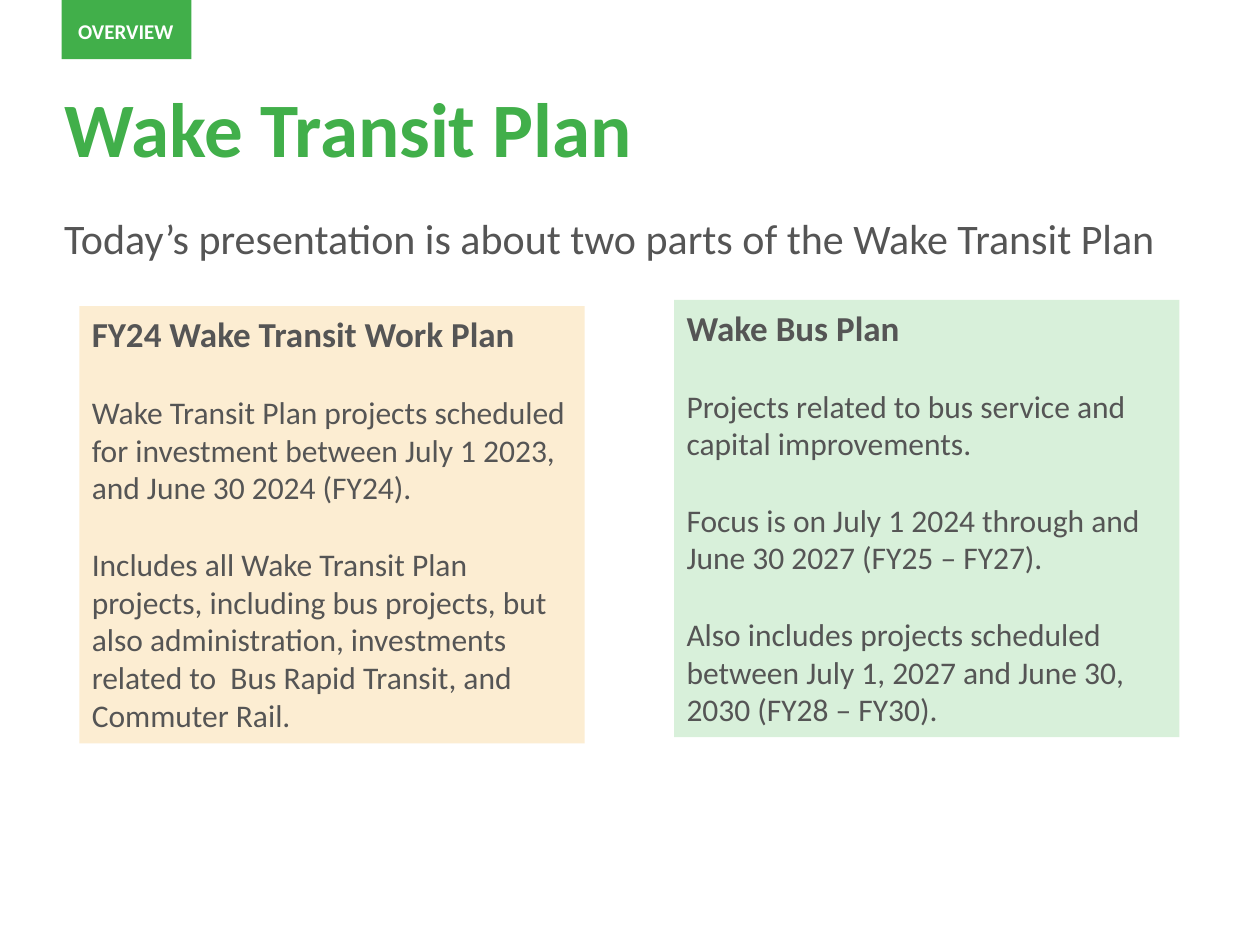
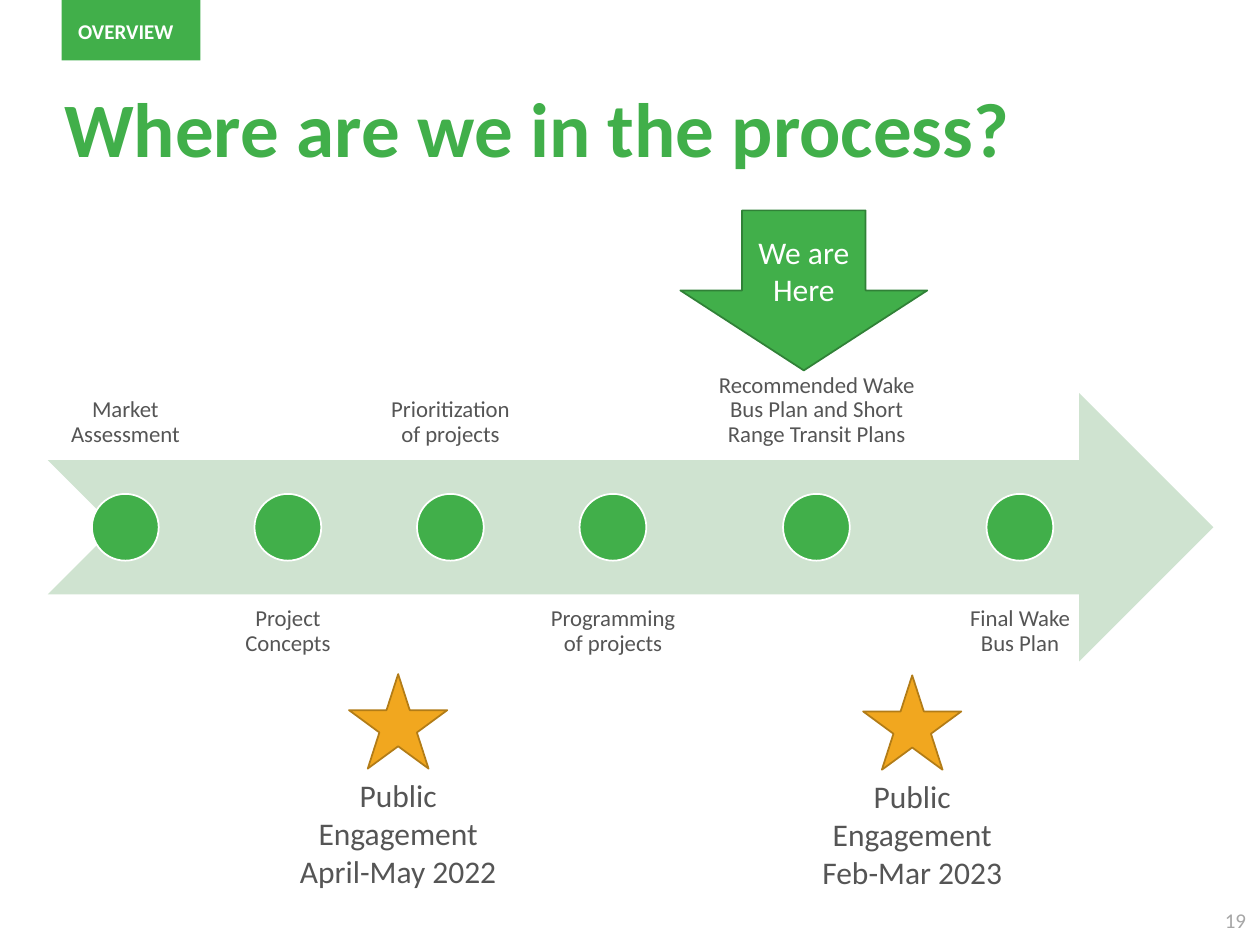
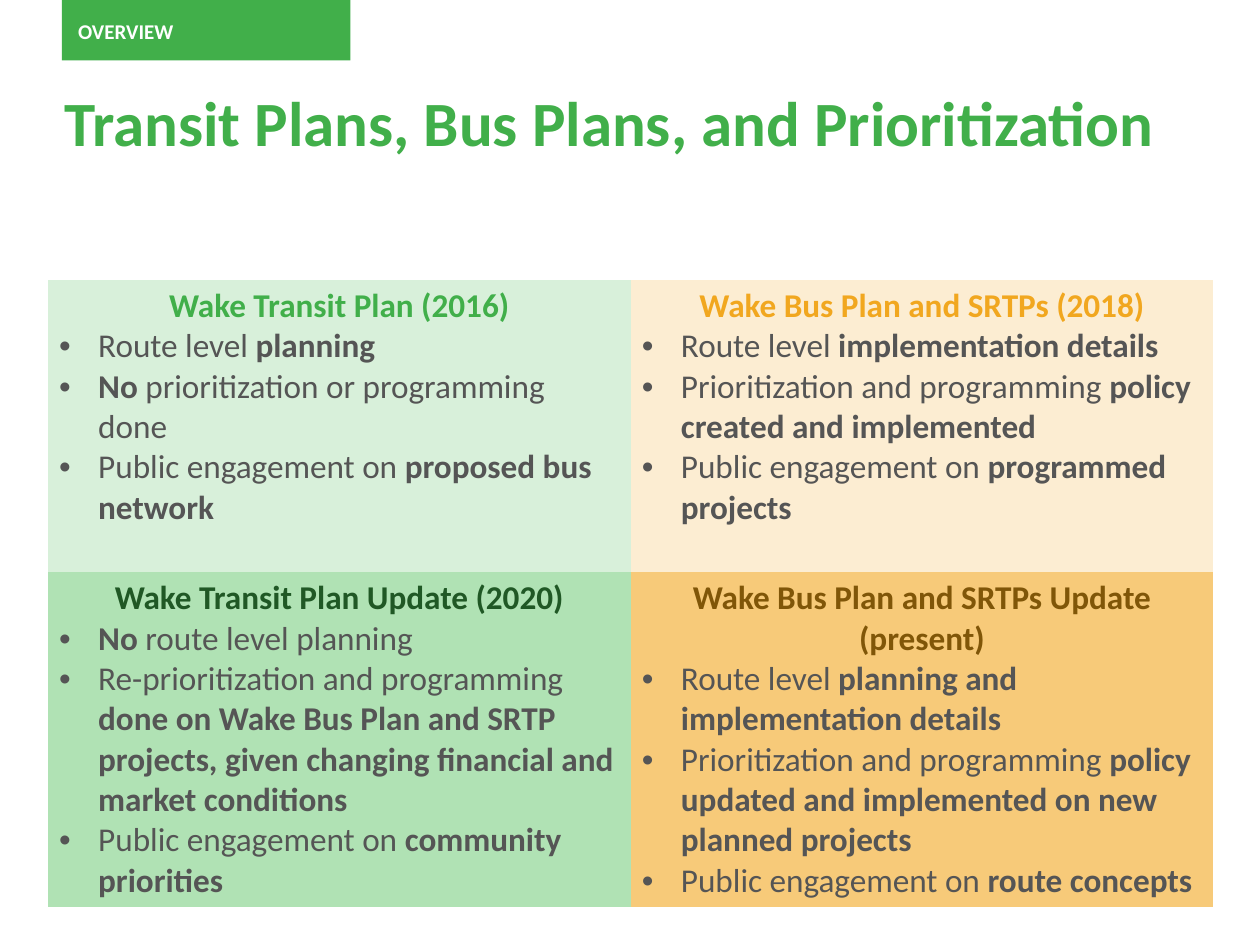
from lxml import etree
from pptx import Presentation
from pptx.dml.color import RGBColor
from pptx.enum.shapes import MSO_SHAPE
from pptx.enum.text import MSO_ANCHOR, MSO_AUTO_SIZE, PP_ALIGN
from pptx.oxml.ns import qn
from pptx.util import Inches, Pt

RECT, OVAL, STAR = MSO_SHAPE.RECTANGLE, MSO_SHAPE.OVAL, MSO_SHAPE.STAR_5_POINT
DOWN_ARROW, TIME_ARROW = MSO_SHAPE.DOWN_ARROW, MSO_SHAPE.NOTCHED_RIGHT_ARROW
TOP, MIDDLE, BOTTOM = MSO_ANCHOR.TOP, MSO_ANCHOR.MIDDLE, MSO_ANCHOR.BOTTOM
LEFT, CENTER = PP_ALIGN.LEFT, PP_ALIGN.CENTER

FONT = "Calibri"
NO_GRID_STYLE = "{2D5ABB26-0587-4C30-8999-92F81FD0307C}"
COLORS = {
    "green": "41AF4A", "green_line": "308137", "green_dark": "205825",
    "green_mid": "B0E2B4", "green_pale": "D8F0DA", "arrow": "CFE3D0",
    "orange": "F1A71F", "orange_line": "B27C17", "orange_dark": "805608",
    "orange_mid": "F7CA79", "orange_pale": "FCEDD2",
    "text": "555555", "number": "A6A6A6", "white": "FFFFFF",
}
C = {name: RGBColor.from_string(value) for name, value in COLORS.items()}


def add_text(tf, text, size, color="text", align=LEFT, spacing=1.0):
    """Fill the empty first paragraph or add one; *stars* mark bold."""
    p = tf.paragraphs[0]
    if p.runs:
        p = tf.add_paragraph()
    p.alignment, p.line_spacing, p.space_before = align, spacing, Pt(0)
    for i, part in enumerate(text.split("*")):
        if part:
            r = p.add_run()
            r.text = part
            r.font.name, r.font.size, r.font.bold = FONT, Pt(size), i % 2 == 1
            r.font.color.rgb = C[color]
    return p


def add_box(s, kind, at, fill=None, line=None, anchor=TOP, margin=None):
    """Add a preset shape, or a text box when kind is None."""
    at = [Inches(v) for v in at]
    if kind is None:
        sp = s.shapes.add_textbox(*at)
    else:
        sp = s.shapes.add_shape(kind, *at)
        sp.shadow.inherit = False
        sp.fill.solid()
        sp.fill.fore_color.rgb = C[fill]
        if line:
            sp.line.color.rgb = C[line]
            sp.line.width = Pt(1)
        else:
            sp.line.fill.background()
    tf = sp.text_frame
    tf.word_wrap, tf.vertical_anchor = True, anchor
    if margin is not None:
        tf.margin_left = tf.margin_right = Inches(margin)
        tf.margin_top = tf.margin_bottom = Inches(margin)
    return tf


prs = Presentation()
prs.slide_width, prs.slide_height = Inches(10), Inches(7.5)

# Shared title and section tab: layout, title, title size, tab size
slides = []
for layout, title, size, tab_w, tab_h in [
    (1, "Wake Transit Plan", 44, 1.03, 0.47),
    (5, "Where are we in the process?", 44, 1.1, 0.48),
    (5, "Transit Plans, Bus Plans, and Prioritization", 36, 2.29, 0.48),
]:
    s = prs.slides.add_slide(prs.slide_layouts[layout])
    slides.append(s)
    placeholders = [(s.shapes.title, 0.65, 0.87)]
    if layout == 1:
        placeholders.append((s.placeholders[1], 1.52, 5.33))
    for sp, top, height in placeholders:
        sp.left, sp.top = Inches(0.38), Inches(top)
        sp.width, sp.height = Inches(9.25), Inches(height)
        tf = sp.text_frame
        tf.auto_size, tf.vertical_anchor = MSO_AUTO_SIZE.NONE, TOP
        tf.margin_left = tf.margin_right = Inches(0.13)
        tf.margin_top = tf.margin_bottom = Inches(0.13)
    add_text(s.shapes.title.text_frame, f"*{title}*", size, "green", spacing=0.8)
    tf = add_box(s, RECT, (0.49, 0, tab_w, tab_h), "green", margin=0.13)
    tf.margin_right = 0
    add_text(tf, "*OVERVIEW*", 12, "white", spacing=1.1)

overview, process, comparison = slides

# Slide 1: two plan cards
p = add_text(overview.placeholders[1].text_frame,
             "Today’s presentation is about two parts of the Wake Transit Plan",
             24, spacing=1.1)
pPr = p._p.get_or_add_pPr()
pPr.set("marL", "0")
pPr.set("indent", "0")
etree.SubElement(pPr, qn("a:buNone"))

cards = [
    (0.63, 2.43, "orange_pale", "FY24 Wake Transit Work Plan", [
        "Wake Transit Plan projects scheduled for investment between "
        "July 1 2023, and June 30 2024 (FY24).",
        "Includes all Wake Transit Plan projects, including bus projects, but also "
        "administration, investments related to  Bus Rapid Transit, and Commuter Rail."]),
    (5.35, 2.38, "green_pale", "Wake Bus Plan", [
        "Projects related to bus service and capital improvements.",
        "Focus is on July 1 2024 through and June 30 2027 (FY25 – FY27).",
        "Also includes projects scheduled between July 1, 2027 and "
        "June 30, 2030 (FY28 – FY30)."]),
]
for left, top, fill, heading, paragraphs in cards:
    tf = add_box(overview, RECT, (left, top, 4.01, 3.47), fill)
    add_text(tf, f"*{heading}*", 20)
    for text in paragraphs:
        add_text(tf, text, 18).space_before = Pt(22)

# Slide 2: timeline with labels alternating above and below the arrow
add_box(process, TIME_ARROW, (0.38, 3.12, 9.25, 2.13), "arrow")
milestones = [
    ("Market Assessment", 1.23), ("Project Concepts", 1.23),
    ("Prioritization of projects", 1.23), ("Programming of projects", 1.23),
    ("Recommended Wake Bus Plan and Short Range Transit Plans", 1.88),
    ("Final Wake Bus Plan", 1.23),
]
GAP, DOT = 0.06, 0.53
left = 0.38
for i, (label, width) in enumerate(milestones):
    top, anchor = (4.72, TOP) if i % 2 else (1.52, BOTTOM)
    tf = add_box(process, None, (left, top, width, 2.13), anchor=anchor, margin=0.1)
    add_text(tf, label, 13, align=CENTER, spacing=0.9)
    add_box(process, OVAL, (left + (width - DOT) / 2, 3.92, DOT, DOT), "green", "white")
    left += width + GAP

for left, top, date in [(2.12, 5.35, "April-May 2022"), (6.2, 5.36, "Feb-Mar 2023")]:
    add_box(process, STAR, (left + 0.65, top, 0.78, 0.75), "orange", "orange_line")
    tf = add_box(process, None, (left, top + 0.76, 2.08, 0.71))
    for text in ("Public Engagement", date):
        add_text(tf, text, 18, align=CENTER)

tf = add_box(process, DOWN_ARROW, (5.4, 1.67, 1.96, 1.27), "green", "green_line", MIDDLE)
add_text(tf, "We are Here", 18, "white", CENTER)
tf = add_box(process, None, (9.62, 7.1, 0.37, 0.4), anchor=MIDDLE, margin=0)
add_text(tf, "19", 12, "number", CENTER)

# Slide 3: two by two comparison table
cells = [
    [("Wake Transit Plan (2016)", "green", "green_pale", [
        "Route level *planning*",
        "*No* prioritization or programming done",
        "Public engagement on *proposed bus network*"]),
     ("Wake Bus Plan and SRTPs (2018)", "orange", "orange_pale", [
         "Route level *implementation details*",
         "Prioritization and programming* policy created and implemented*",
         "Public engagement on *programmed projects*"])],
    [("Wake Transit Plan Update (2020)", "green_dark", "green_mid", [
        "*No *route level planning",
        "Re-prioritization and programming *done on Wake Bus Plan and SRTP "
        "projects, given changing financial and market conditions*",
        "Public engagement on *community priorities*"]),
     ("Wake Bus Plan and SRTPs Update (present)", "orange_dark", "orange_mid", [
         "Route level *planning and implementation details*",
         "Prioritization and programming *policy updated and implemented "
         "on new planned projects*",
         "Public engagement on *route concepts*"])],
]
table = comparison.shapes.add_table(
    2, 2, Inches(0.38), Inches(2.22), Inches(9.25), Inches(4.95)).table
table.first_row = table.horz_banding = False
table._tbl.tblPr.find(qn("a:tableStyleId")).text = NO_GRID_STYLE
for row, height in zip(table.rows, (2.32, 2.63)):
    row.height = Inches(height)
for i, row in enumerate(cells):
    for j, (heading, color, fill, points) in enumerate(row):
        cell = table.cell(i, j)
        cell.fill.solid()
        cell.fill.fore_color.rgb = C[fill]
        cell.margin_left = cell.margin_right = Inches(0.09)
        add_text(cell.text_frame, f"*{heading}*", 19, color, CENTER)
        for point in points:
            pPr = add_text(cell.text_frame, point, 19)._p.get_or_add_pPr()
            pPr.set("marL", str(Inches(0.31)))
            pPr.set("indent", str(-Inches(0.31)))
            etree.SubElement(pPr, qn("a:buFont")).set("typeface", "Arial")
            etree.SubElement(pPr, qn("a:buChar")).set("char", "•")

prs.save("out.pptx")
